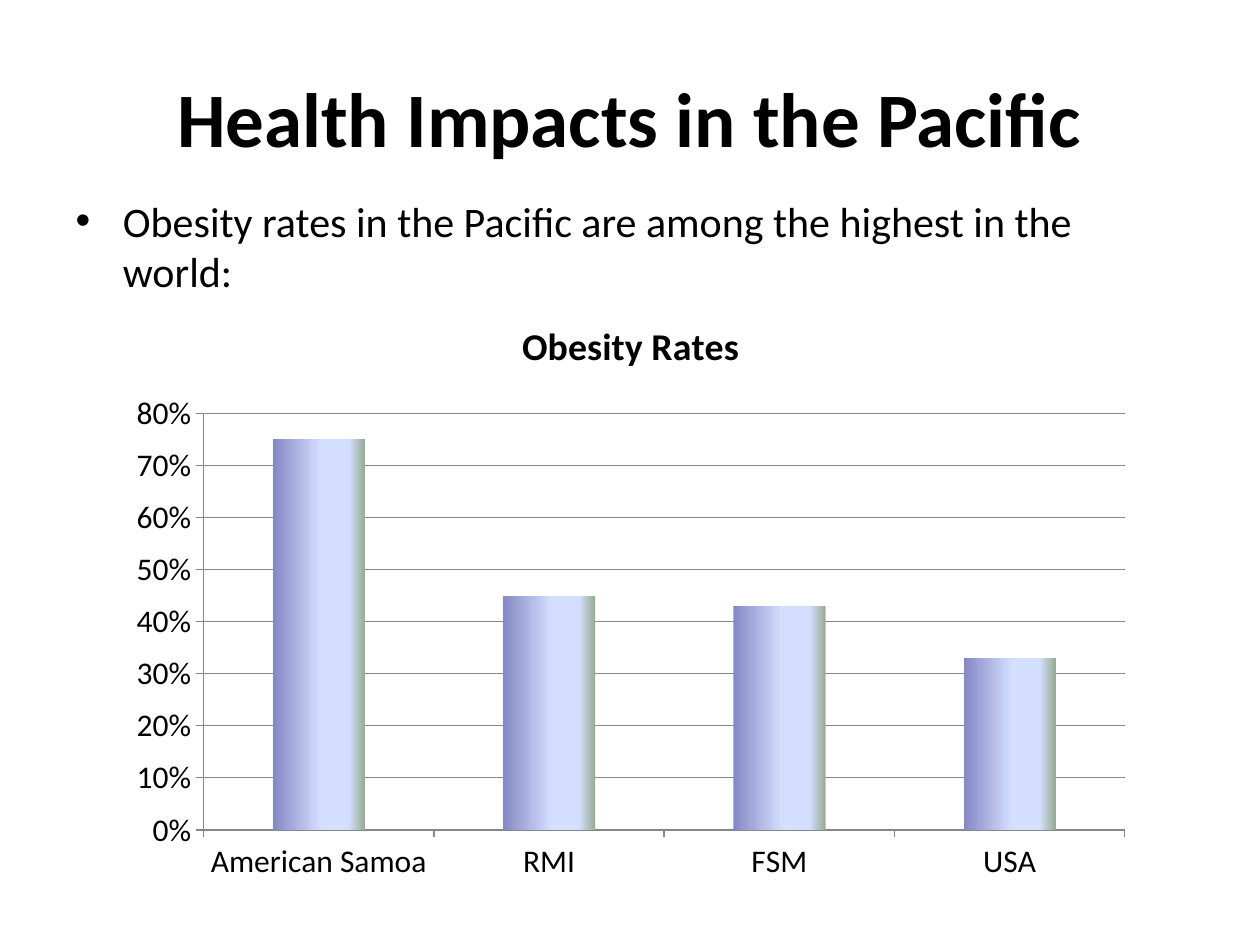
from lxml.etree import SubElement
from pptx import Presentation
from pptx.chart.data import CategoryChartData
from pptx.dml.color import RGBColor
from pptx.enum.chart import XL_CHART_TYPE, XL_TICK_MARK
from pptx.enum.text import MSO_ANCHOR, PP_ALIGN
from pptx.oxml.ns import qn
from pptx.util import Cm, Pt

RATES = {"American Samoa": 0.75, "RMI": 0.45, "FSM": 0.43, "USA": 0.33}
BAR_STOPS = [(0, "8488C4"), (53, "D4DEFF"), (83, "D4DEFF"), (100, "96AB94")]


def colour(hex_code):
    return RGBColor.from_string(hex_code)


def apply(target, values):
    for name, value in values.items():
        setattr(target, name, value)


class Builder:
    font_name = "Calibri"
    text_colour = "000000"
    line_colour = "868686"

    def __init__(self, deck):
        self.page = deck.slides.add_slide(deck.slide_layouts[1])

    def style_font(self, font, size, bold=False):
        apply(font, {"name": self.font_name, "size": Pt(size), "bold": bold})
        font.color.rgb = colour(self.text_colour)

    def style_line(self, line):
        line.color.rgb = colour(self.line_colour)
        line.width = Pt(0.75)

    def fill_placeholder(self, index, text, place, size, bold=False, **paragraph_format):
        box = self.page.placeholders[index]
        apply(box, dict(zip(("left", "top", "width", "height"), map(Cm, place))))
        para = box.text_frame.paragraphs[0]
        apply(para, paragraph_format)
        span = para.add_run()
        span.text = text
        self.style_font(span.font, size, bold)
        return box

    def gradient(self, fill, stops):
        fill.gradient()
        fill.gradient_angle = 0
        # The public methods cannot add stops, so the list is rebuilt
        stop_list = fill._xPr.find(qn("a:gradFill")).find(qn("a:gsLst"))
        for old_stop in list(stop_list):
            stop_list.remove(old_stop)
        for percent, hex_code in stops:
            stop = SubElement(stop_list, qn("a:gs"), pos=str(percent * 1000))
            SubElement(stop, qn("a:srgbClr"), val=hex_code)

    def column_chart(self, title, rates, place):
        data = CategoryChartData(number_format="0%")
        data.categories = list(rates)
        data.add_series(title, list(rates.values()))
        chart = self.page.shapes.add_chart(
            XL_CHART_TYPE.COLUMN_STACKED, *map(Cm, place), data).chart
        chart.has_legend = False
        self.style_font(chart.font, 18)

        # Chart title
        chart.has_title = True
        frame = chart.chart_title.text_frame
        frame.text = title
        self.style_font(frame.paragraphs[0].runs[0].font, 21.6, bold=True)
        chart.chart_title.include_in_layout = False

        # Axes
        for axis in (chart.category_axis, chart.value_axis):
            apply(axis, {"major_tick_mark": XL_TICK_MARK.OUTSIDE,
                         "minor_tick_mark": XL_TICK_MARK.NONE})
            self.style_line(axis.format.line)
        apply(chart.value_axis, {"minimum_scale": 0, "maximum_scale": 0.8,
                                 "major_unit": 0.1, "has_major_gridlines": True})
        apply(chart.value_axis.tick_labels,
              {"number_format": "0%", "number_format_is_linked": False})
        self.style_line(chart.value_axis.major_gridlines.format.line)

        # Bars
        plot = chart.plots[0]
        apply(plot, {"gap_width": 150, "overlap": 100, "vary_by_categories": False})
        self.gradient(plot.series[0].format.fill, BAR_STOPS)


def main():
    deck = Presentation()
    apply(deck, {"slide_width": Cm(25.4), "slide_height": Cm(19.05)})
    builder = Builder(deck)

    # Title and bullet
    title = builder.fill_placeholder(
        0, "Health Impacts in the Pacific", (1.27, 0.76, 22.86, 3.18), 44,
        bold=True, alignment=PP_ALIGN.CENTER)
    title.text_frame.vertical_anchor = MSO_ANCHOR.MIDDLE
    builder.fill_placeholder(
        1, "Obesity rates in the Pacific are among the highest in the world:",
        (1.27, 3.81, 22.86, 13.21), 24)

    # Chart
    builder.column_chart("Obesity Rates", RATES, (2.34, 5.92, 20.75, 12.07))
    deck.save("out.pptx")


if __name__ == "__main__":
    main()
